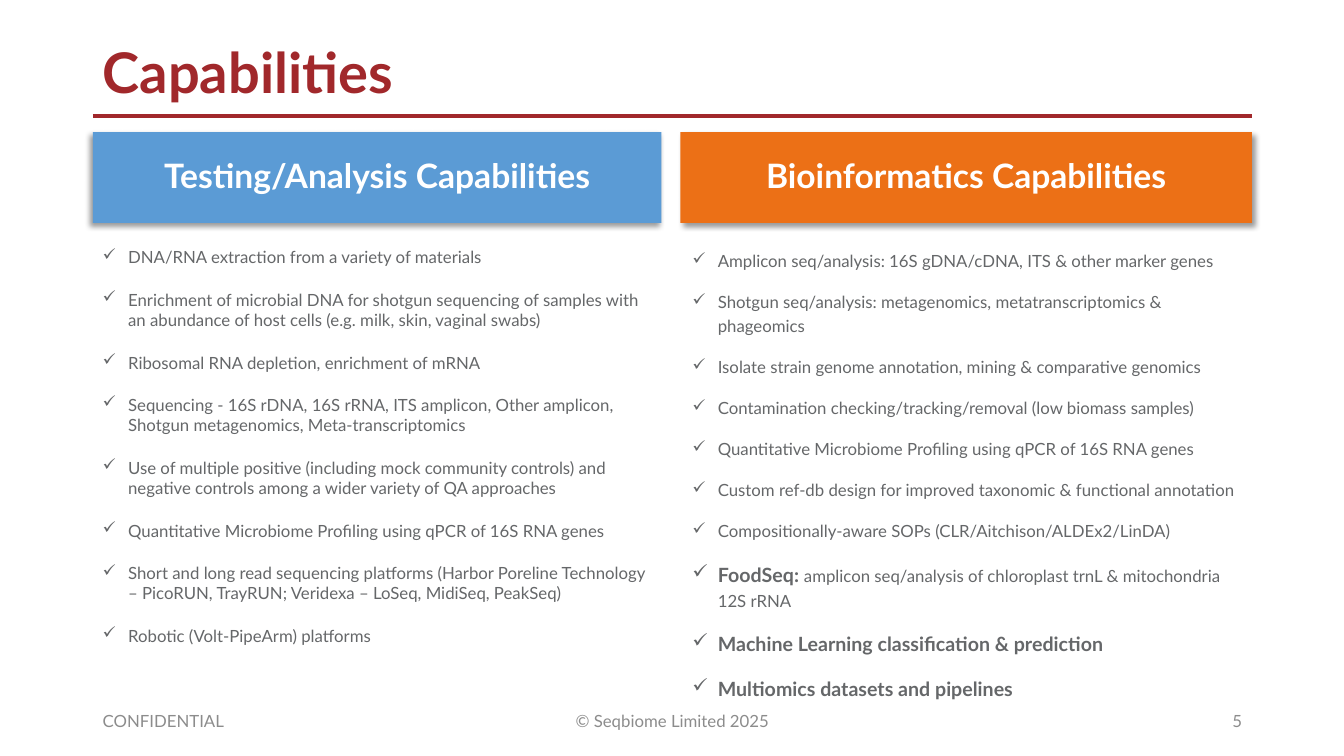
from dataclasses import dataclass

from lxml.etree import SubElement
from pptx import Presentation
from pptx.dml.color import RGBColor
from pptx.enum.shapes import MSO_CONNECTOR, MSO_SHAPE
from pptx.enum.text import MSO_ANCHOR, PP_ALIGN
from pptx.oxml.ns import qn
from pptx.util import Cm, Pt


@dataclass(frozen=True)
class Theme:
    font: str = "Lato"
    red: str = "A1282B"
    blue: str = "5B9BD5"
    orange: str = "EC7016"
    white: str = "FFFFFF"
    body: str = "656769"
    footer: str = "8C8C8C"
    shadow: str = "000000"
    title_size: int = 40
    banner_size: int = 24
    strong_size: int = 14
    body_size: int = 12


theme = Theme()


def add_run(paragraph, text, size, color, bold=False):
    run = paragraph.add_run()
    run.text = text
    run.font.name = theme.font
    run.font.size = Pt(size)
    run.font.bold = bold
    run.font.color.rgb = RGBColor.from_string(color)


def add_text_box(left, top, width, height, anchor=MSO_ANCHOR.MIDDLE):
    """Add a wrapping text box, measured in centimetres, and return its frame."""
    frame = slide.shapes.add_textbox(Cm(left), Cm(top), Cm(width), Cm(height)).text_frame
    frame.word_wrap = True
    frame.vertical_anchor = anchor
    return frame


presentation = Presentation()
presentation.slide_width = Cm(33.87)
presentation.slide_height = Cm(19.05)
slide = presentation.slides.add_slide(presentation.slide_layouts[6])

left_edge, right_edge = 2.34, 31.55
content_width = right_edge - left_edge

# Title and rule
rule = slide.shapes.add_connector(
    MSO_CONNECTOR.STRAIGHT, Cm(left_edge), Cm(2.92), Cm(right_edge), Cm(2.92))
rule.line.color.rgb = RGBColor.from_string(theme.red)
rule.line.width = Pt(3)
SubElement(rule._element.spPr, qn("a:effectLst"))

title = add_text_box(left_edge, 1.02, content_width, 1.78).paragraphs[0]
title.line_spacing = 0.9
add_run(title, "Capabilities", theme.title_size, theme.red, bold=True)

# Column banners; the shadow angle is in degrees
banners = [
    ("Testing/Analysis Capabilities", left_edge, 14.33, theme.blue, 135),
    ("Bioinformatics Capabilities", 17.15, 14.4, theme.orange, 45),
]
for heading, left, width, color, shadow_angle in banners:
    banner = slide.shapes.add_shape(
        MSO_SHAPE.RECTANGLE, Cm(left), Cm(3.33), Cm(width), Cm(2.29))
    banner.fill.solid()
    banner.fill.fore_color.rgb = RGBColor.from_string(color)
    banner.line.fill.background()
    banner.shadow.inherit = False
    effects = banner._element.spPr.find(qn("a:effectLst"))
    shadow = SubElement(
        effects, qn("a:outerShdw"), blurRad=str(Pt(4)), dist=str(Pt(3)),
        dir=str(shadow_angle * 60000), algn="t", rotWithShape="0")
    shadow_color = SubElement(shadow, qn("a:srgbClr"), val=theme.shadow)
    SubElement(shadow_color, qn("a:alpha"), val="40000")

    banner.text_frame.word_wrap = True
    banner.text_frame.vertical_anchor = MSO_ANCHOR.MIDDLE
    label = banner.text_frame.paragraphs[0]
    label.alignment = PP_ALIGN.CENTER
    label.line_spacing = 0.9
    add_run(label, heading, theme.banner_size, theme.white, bold=True)

# Check lists: each item is a strong part and a plain part
testing_items = [
    ("", "DNA/RNA extraction from a variety of materials"),
    ("", "Enrichment of microbial DNA for shotgun sequencing of samples with "
         "an abundance of host cells (e.g. milk, skin, vaginal swabs)"),
    ("", "Ribosomal RNA depletion, enrichment of mRNA"),
    ("", "Sequencing - 16S rDNA, 16S rRNA, ITS amplicon, Other amplicon, "
         "Shotgun metagenomics, Meta-transcriptomics"),
    ("", "Use of multiple positive (including mock community controls) and "
         "negative controls among a wider variety of QA approaches"),
    ("", "Quantitative Microbiome Profiling using qPCR of 16S RNA genes"),
    ("", "Short and long read sequencing platforms (Harbor Poreline "
         "Technology – PicoRUN, TrayRUN; Veridexa – LoSeq, MidiSeq, PeakSeq)"),
    ("", "Robotic (Volt-PipeArm) platforms"),
]
bioinformatics_items = [
    ("", "Amplicon seq/analysis: 16S gDNA/cDNA, ITS & other marker genes"),
    ("", "Shotgun seq/analysis: metagenomics, metatranscriptomics & phageomics"),
    ("", "Isolate strain genome annotation, mining & comparative genomics"),
    ("", "Contamination checking/tracking/removal (low biomass samples)"),
    ("", "Quantitative Microbiome Profiling using qPCR of 16S RNA genes"),
    ("", "Custom ref-db design for improved taxonomic & functional annotation"),
    ("", "Compositionally-aware SOPs (CLR/Aitchison/ALDEx2/LinDA)"),
    ("FoodSeq: ", "amplicon seq/analysis of chloroplast trnL & mitochondria 12S rRNA"),
    ("Machine Learning classification & prediction", ""),
    ("Multiomics datasets and pipelines", ""),
]
checklists = [
    (testing_items, left_edge, 14.33, 11.58, 1.0, 10),
    (bioinformatics_items, 17.2, 14.4, 11.3, 1.2, 6),
]
for items, left, width, height, line_spacing, space_before in checklists:
    checklist = add_text_box(left, 6.1, width, height, MSO_ANCHOR.TOP)
    for index, (strong, plain) in enumerate(items):
        item = checklist.add_paragraph() if index else checklist.paragraphs[0]
        properties = item._p.get_or_add_pPr()
        properties.set("marL", str(Cm(0.64)))
        properties.set("indent", str(-Cm(0.64)))
        SubElement(properties, qn("a:buChar"), char="✓")
        item.line_spacing = line_spacing
        item.space_before = Pt(space_before if index else 0)
        item.space_after = Pt(6)
        if strong:
            add_run(item, strong, theme.strong_size, theme.body, bold=True)
        if plain:
            add_run(item, plain, theme.body_size, theme.body)

# Footer
footers = [
    ("CONFIDENTIAL", left_edge, 7.62, PP_ALIGN.LEFT),
    ("© Seqbiome Limited 2025", 11.23, 11.43, PP_ALIGN.CENTER),
    ("5", right_edge - 7.62, 7.62, PP_ALIGN.RIGHT),
]
for text, left, width, alignment in footers:
    footer = add_text_box(left, 17.65, width, 1.02).paragraphs[0]
    footer.alignment = alignment
    add_run(footer, text, theme.body_size, theme.footer)

presentation.save("out.pptx")
